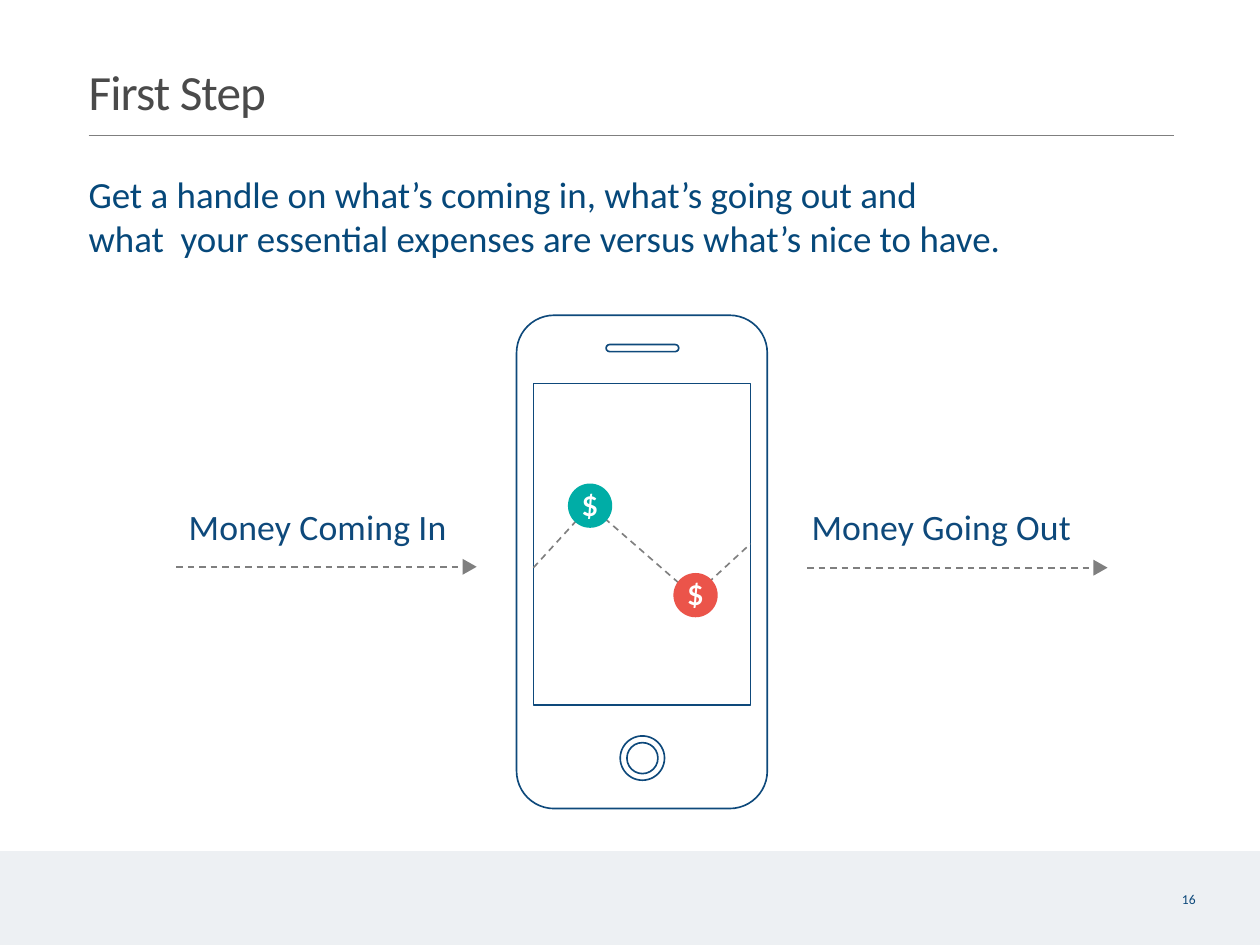
from pptx import Presentation
from pptx.dml.color import RGBColor
from pptx.enum.dml import MSO_LINE
from pptx.enum.shapes import MSO_CONNECTOR, MSO_SHAPE as SHAPE
from pptx.enum.text import MSO_ANCHOR, PP_ALIGN
from pptx.util import Inches, Pt
from lxml import etree

COLORS = {
    "footer": "EDF0F3",
    "title": "4A4A4A",
    "body": "06487A",
    "navy": "0E497B",
    "gray": "7F7F7F",
    "coming_in": "00ADA6",
    "going_out": "EB544A",
    "white": "FFFFFF",
}
DRAWING_NS = "http://schemas.openxmlformats.org/drawingml/2006/main"

presentation = Presentation()
presentation.slide_width = Inches(14.22)
presentation.slide_height = Inches(10.67)
slide = presentation.slides.add_slide(presentation.slide_layouts[6])


def add_figure(kind, left, top, width, height, fill=None, line=None):
    shape = slide.shapes.add_shape(
        kind, Inches(left), Inches(top), Inches(width), Inches(height))
    shape.shadow.inherit = False
    if fill:
        shape.fill.solid()
        shape.fill.fore_color.rgb = RGBColor.from_string(COLORS[fill])
    else:
        shape.fill.background()
    if line:
        shape.line.color.rgb = RGBColor.from_string(COLORS[line])
        shape.line.width = Pt(1.33)
    else:
        shape.line.fill.background()
    return shape


def add_line(left, right, y, width):
    connector = slide.shapes.add_connector(
        MSO_CONNECTOR.STRAIGHT, Inches(left), Inches(y), Inches(right), Inches(y))
    connector.line.color.rgb = RGBColor.from_string(COLORS["gray"])
    connector.line.width = Pt(width)
    etree.SubElement(connector._element.spPr, f"{{{DRAWING_NS}}}effectLst")
    return connector


add_figure(SHAPE.RECTANGLE, 0, 9.61, 14.22, 1.06, fill="footer")
add_line(1, 13.25, 1.53, 1)

phone = add_figure(SHAPE.ROUNDED_RECTANGLE, 5.83, 3.56, 2.83, 5.57, line="navy")
phone.adjustments[0] = 0.15
speaker = add_figure(SHAPE.ROUNDED_RECTANGLE, 6.84, 3.89, 0.82, 0.08, line="navy")
speaker.adjustments[0] = 0.5
add_figure(SHAPE.RECTANGLE, 6.02, 4.33, 2.45, 3.63, line="navy")
for diameter in (0.5, 0.35):
    add_figure(SHAPE.OVAL, 7.25 - diameter / 2, 8.56 - diameter / 2,
               diameter, diameter, line="navy")

builder = slide.shapes.build_freeform(Inches(6.02), Inches(6.41))
builder.add_line_segments(
    [(Inches(x), Inches(y)) for x, y in ((6.66, 5.71), (7.83, 6.73), (8.47, 6.14))],
    close=False)
trend = builder.convert_to_shape()
trend.shadow.inherit = False
trend.fill.background()
trend.line.color.rgb = RGBColor.from_string(COLORS["gray"])
trend.line.width = Pt(1.33)
trend.line.dash_style = MSO_LINE.DASH

for left, top, color in ((6.41, 5.46, "coming_in"), (7.6, 6.47, "going_out")):
    coin = add_figure(SHAPE.OVAL, left, top, 0.5, 0.5, fill=color)
    frame = coin.text_frame
    frame.margin_left = frame.margin_right = frame.margin_top = frame.margin_bottom = 0
    frame.vertical_anchor = MSO_ANCHOR.MIDDLE
    frame.word_wrap = False
    paragraph = frame.paragraphs[0]
    paragraph.alignment = PP_ALIGN.CENTER
    run = paragraph.add_run()
    run.text = "$"
    run.font.name = "Lato"
    run.font.size = Pt(22)
    run.font.bold = True
    run.font.color.rgb = RGBColor.from_string(COLORS["white"])

for left, y in ((1.99, 6.4), (9.11, 6.41)):
    arrow = add_line(left, left + 3.25, y, 1.33)
    arrow.line.dash_style = MSO_LINE.DASH
    head = add_figure(SHAPE.ISOSCELES_TRIANGLE, left + 3.22, y - 0.08, 0.18, 0.16,
                      fill="gray")
    head.rotation = 90

texts = (
    (0.99, 0.66, 2.6, 0.69, 40, "title", -70, ["First Step"]),
    (0.99, 1.91, 10.6, 1.03, 30, "body", 0,
     ["Get a handle on what’s coming in, what’s going out and",
      "what  your essential expenses are versus what’s nice to have."]),
    (2.12, 5.67, 3.2, 0.51, 29, "navy", 10, ["Money Coming In"]),
    (9.15, 5.67, 3.2, 0.51, 29, "navy", 10, ["Money Going Out"]),
    (13.33, 10.03, 0.4, 0.2, 11, "navy", 0, ["16"]),
)
for left, top, width, height, size, color, spacing, lines in texts:
    box = slide.shapes.add_textbox(
        Inches(left), Inches(top), Inches(width), Inches(height))
    frame = box.text_frame
    frame.word_wrap = True
    frame.margin_left = Inches(0.01)
    frame.margin_right = frame.margin_bottom = 0
    frame.margin_top = Inches(0.03)
    paragraph = frame.paragraphs[0]
    for index, line in enumerate(lines):
        if index:
            paragraph.add_line_break()
        run = paragraph.add_run()
        run.text = line
        run.font.name = "Calibri"
        run.font.size = Pt(size)
        run.font.color.rgb = RGBColor.from_string(COLORS[color])
        run._r.get_or_add_rPr().set("spc", str(spacing))

presentation.save("out.pptx")
